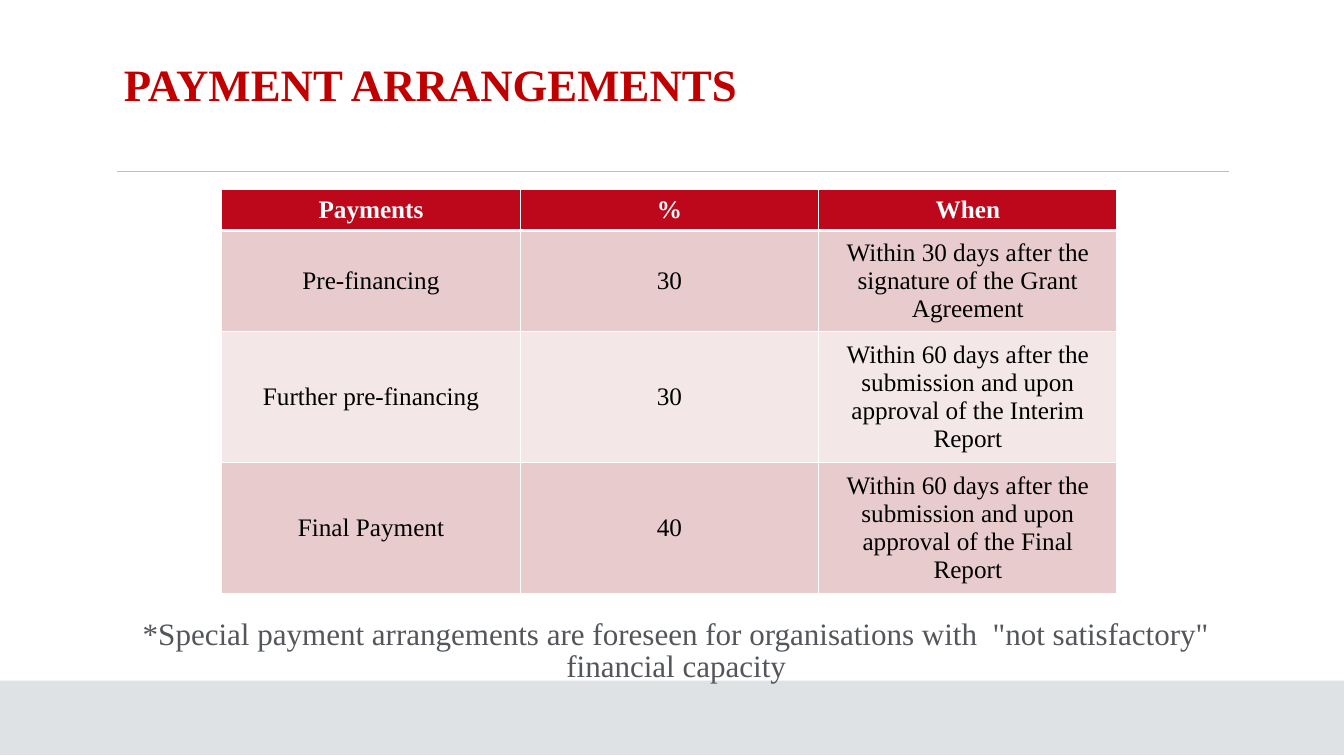
import pptx
import pptx.dml.color
import pptx.enum.shapes
import pptx.enum.text
import pptx.oxml
import pptx.oxml.ns
import pptx.util
from pptx.util import Cm

# Content
TITLE = "PAYMENT ARRANGEMENTS"
PAYMENTS = [
    ("Payments", "%", "When"),
    ("Pre-financing", "30",
     "Within 30 days after the signature of the Grant Agreement"),
    ("Further pre-financing", "30",
     "Within 60 days after the submission and upon approval of the Interim Report"),
    ("Final Payment", "40",
     "Within 60 days after the submission and upon approval of the Final Report"),
]
NOTE = ('*Special payment arrangements are foreseen for organisations with  '
        '"not satisfactory" financial capacity')

# Look
FONT = "Times New Roman"
HEADER_FILL = "BD081C"
BAND_FILLS = ("E8CCCD", "F4E7E8")
ROW_HEIGHTS = (1.03, 2.36, 3.08, 3.08)
COLUMN_WIDTH = 7.52
CENTER = pptx.enum.text.PP_ALIGN.CENTER
ANCHOR = pptx.enum.text.MSO_ANCHOR


def color(value):
    return pptx.dml.color.RGBColor.from_string(value)


def style(para, size, ink, bold=False):
    for span in para.runs:
        span.font.name = FONT
        span.font.size = pptx.util.Pt(size)
        span.font.bold = bold
        span.font.color.rgb = color(ink)


def add_text(page, text, place, size, ink, spacing, bold=False):
    box = page.shapes.add_textbox(*map(Cm, place))
    box.text_frame.word_wrap = True
    para = box.text_frame.paragraphs[0]
    para.text = text
    para.line_spacing = spacing
    style(para, size, ink, bold)
    return box.text_frame


def add_borders(cell, bottom):
    properties = cell._tc.get_or_add_tcPr()
    widths = {"lnL": 1, "lnR": 1, "lnT": 1, "lnB": bottom}
    for position, (side, width) in enumerate(widths.items()):
        border = pptx.oxml.parse_xml(
            f'<a:{side} {pptx.oxml.ns.nsdecls("a")} w="{pptx.util.Pt(width)}">'
            '<a:solidFill><a:srgbClr val="FFFFFF"/></a:solidFill>'
            f'</a:{side}>')
        properties.insert(position, border)


def add_payment_table(page):
    columns = len(PAYMENTS[0])
    frame = page.shapes.add_table(
        len(PAYMENTS), columns, Cm(5.59), Cm(4.78),
        Cm(COLUMN_WIDTH * columns), Cm(sum(ROW_HEIGHTS)))
    table = frame.table
    for column in table.columns:
        column.width = Cm(COLUMN_WIDTH)
    for index, values in enumerate(PAYMENTS):
        header = index == 0
        fill = HEADER_FILL if header else BAND_FILLS[(index - 1) % 2]
        table.rows[index].height = Cm(ROW_HEIGHTS[index])
        for cell, value in zip(table.rows[index].cells, values):
            cell.fill.solid()
            cell.fill.fore_color.rgb = color(fill)
            cell.vertical_anchor = ANCHOR.MIDDLE
            para = cell.text_frame.paragraphs[0]
            para.text = value
            para.alignment = CENTER
            style(para, 18, "FFFFFF" if header else "000000", header)
            add_borders(cell, 3 if header else 1)


def main():
    deck = pptx.Presentation()
    deck.slide_width, deck.slide_height = Cm(33.87), Cm(19.05)
    page = deck.slides.add_slide(deck.slide_layouts[6])

    # Footer band
    band = page.shapes.add_shape(
        pptx.enum.shapes.MSO_SHAPE.RECTANGLE, 0, Cm(17.15), deck.slide_width, Cm(1.88))
    band.shadow.inherit = False
    band.fill.solid()
    band.fill.fore_color.rgb = color("DFE2E5")
    band.line.fill.background()

    # Rule under the title
    rule = page.shapes.add_connector(
        pptx.enum.shapes.MSO_CONNECTOR.STRAIGHT, Cm(2.95), Cm(4.32), Cm(30.96), Cm(4.32))
    rule.line.color.rgb = color("BFBFBF")
    rule.line.width = pptx.util.Pt(0.5)
    rule._element.spPr.append(
        pptx.oxml.parse_xml(f'<a:effectLst {pptx.oxml.ns.nsdecls("a")}/>'))

    # Title, table and note
    add_text(page, TITLE, (2.87, 1.45, 28.02, 1.68), 32, "C00000", 0.9, True)
    add_payment_table(page)
    note = add_text(page, NOTE, (2.9, 15.5, 27.99, 1.72), 22.2, "53565A", 0.84)
    note.margin_left = Cm(0.55)
    note.margin_bottom = 0
    note.vertical_anchor = ANCHOR.BOTTOM
    note.paragraphs[0].alignment = CENTER

    deck.save("out.pptx")


if __name__ == "__main__":
    main()
